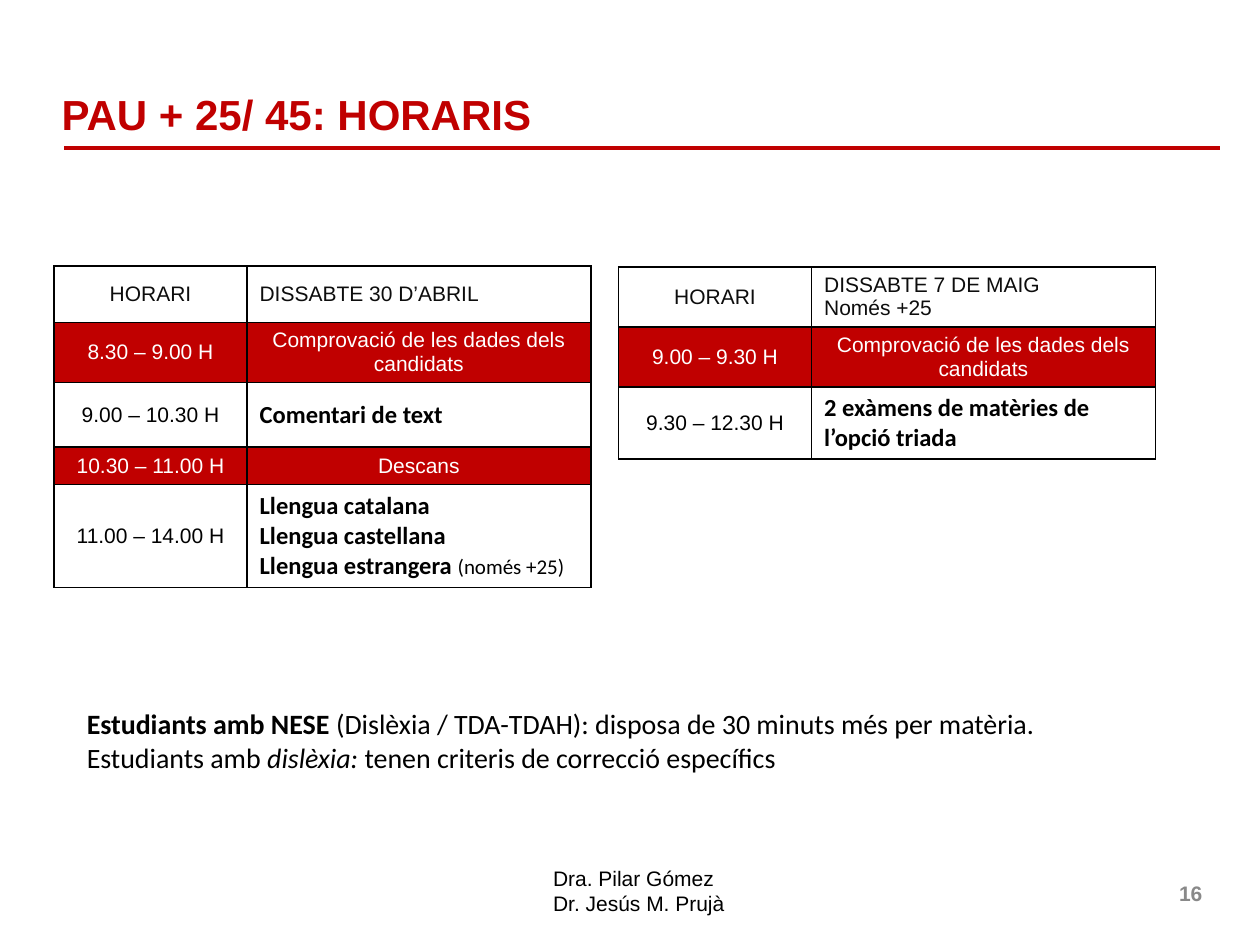
from lxml.etree import SubElement
from pptx import Presentation
from pptx.dml.color import RGBColor
from pptx.enum.shapes import MSO_CONNECTOR as Link
from pptx.enum.text import MSO_ANCHOR as Anchor, PP_ALIGN as Align
from pptx.oxml.ns import qn
from pptx.util import Cm, Pt

RED, WHITE, BLACK, DARK, GREY = "C00000", "FFFFFF", "000000", "0D0D0D", "898989"

# Content: text is a list of paragraphs, a paragraph a list of (words, style)
TITLE = "PAU + 25/ 45: HORARIS"
CHECK = "Comprovació de les dades dels candidats"

# Each row: kind, height in cm, hours, paragraphs
APRIL = [
    ("head", 1.14, "HORARI", [[("DISSABTE 30 D’ABRIL", "")]]),
    ("band", 1.21, "8.30 – 9.00 H", [[(CHECK, "")]]),
    ("exam", 1.3, "9.00 – 10.30 H", [[("Comentari de text", "b")]]),
    ("band", 0.76, "10.30 – 11.00 H", [[("Descans", "")]]),
    ("exam", 2.07, "11.00 – 14.00 H", [
        [("Llengua catalana", "b")],
        [("Llengua castellana", "b")],
        [("Llengua estrangera ", "b"), ("(només +25)", "s")]]),
]
MAY = [
    ("head", 1.21, "HORARI", [[("DISSABTE 7 DE MAIG", "")], [("Només +25", "")]]),
    ("band", 1.21, "9.00 – 9.30 H", [[(CHECK, "")]]),
    ("exam", 1.45, "9.30 – 12.30 H", [[("2 exàmens de matèries de l’opció triada", "b")]]),
]
PLANS = [(1.09, 5.36, APRIL), (12.47, 5.38, MAY)]
COLS = (3.89, 6.93)
KINDS = {"head": (WHITE, DARK), "band": (RED, WHITE), "exam": (WHITE, BLACK)}

NOTES = [
    [("Estudiants amb NESE ", "b"),
     ("(Dislèxia / TDA-TDAH): disposa de 30 minuts més per matèria.", "")],
    [("Estudiants amb ", ""), ("dislèxia:", "i"),
     (" tenen criteris de correcció específics", "")],
]
NAMES = [[("Dra. Pilar Gómez", "")], [("Dr. Jesús M. Prujà", "")]]


def rgb(code):
    return RGBColor.from_string(code)


def write(frame, paras, size, face, tint, align=Align.LEFT):
    for n, runs in enumerate(paras):
        para = frame.paragraphs[0] if n == 0 else frame.add_paragraph()
        para.alignment = align
        for words, style in runs:
            run = para.add_run()
            run.text = words
            font = run.font
            font.name, font.size = face, Pt(12 if style == "s" else size)
            font.bold, font.italic = style == "b", style == "i"
            font.color.rgb = rgb(tint)


def add_text(x, y, w, h, paras, size, face, tint, align=Align.LEFT, anchor=Anchor.TOP):
    frame = slide.shapes.add_textbox(Cm(x), Cm(y), Cm(w), Cm(h)).text_frame
    frame.word_wrap = True
    frame.vertical_anchor = anchor
    write(frame, paras, size, face, tint, align)


def paint(cell, fill):
    cell.vertical_anchor = Anchor.MIDDLE
    props = cell._tc.get_or_add_tcPr()
    for side in ("a:lnL", "a:lnR", "a:lnT", "a:lnB"):
        edge = SubElement(props, qn(side), w=str(Pt(1)))
        SubElement(SubElement(edge, qn("a:solidFill")), qn("a:srgbClr"), val=BLACK)
    cell.fill.solid()
    cell.fill.fore_color.rgb = rgb(fill)


def add_plan(x, y, rows):
    high = sum(row[1] for row in rows)
    table = slide.shapes.add_table(
        len(rows), 2, Cm(x), Cm(y), Cm(sum(COLS)), Cm(high)).table
    for col, wide in zip(table.columns, COLS):
        col.width = Cm(wide)
    for n, (kind, tall, hours, paras) in enumerate(rows):
        table.rows[n].height = Cm(tall)
        fill, tint = KINDS[kind]
        left, right = table.cell(n, 0), table.cell(n, 1)
        paint(left, fill)
        paint(right, fill)
        write(left.text_frame, [[(hours, "")]], 12, "Arial", tint, Align.CENTER)
        exam = kind == "exam"
        write(right.text_frame, paras, 14 if exam else 12,
              "Calibri" if exam else "Arial", tint,
              Align.CENTER if kind == "band" else Align.LEFT)


deck = Presentation()
deck.slide_width, deck.slide_height = Cm(25.4), Cm(19.05)
slide = deck.slides.add_slide(deck.slide_layouts[5])

# Title and rule
head = slide.shapes.title
head.left, head.top, head.width, head.height = Cm(0.99), Cm(1.6), Cm(23.8), Cm(1.4)
head.text_frame.vertical_anchor = Anchor.MIDDLE
write(head.text_frame, [[(TITLE, "b")]], 24, "Arial", RED)

rule = slide.shapes.add_connector(Link.STRAIGHT, Cm(1.3), Cm(2.98), Cm(24.59), Cm(2.98))
rule.line.color.rgb = rgb(RED)
rule.line.width = Pt(2.25)
SubElement(rule._element.spPr, qn("a:effectLst"))

# Timetables
for plan in PLANS:
    add_plan(*plan)

# Notes, authors and page number
add_text(1.5, 14.12, 23.01, 1.63, NOTES, 16, "Calibri", BLACK)
add_text(10.9, 17.32, 3.99, 1.3, NAMES, 12, "Arial", BLACK)
add_text(18.57, 17.5, 5.92, 1.02, [[("16", "b")]], 12, "Arial", GREY,
         Align.RIGHT, Anchor.MIDDLE)

deck.save("out.pptx")
